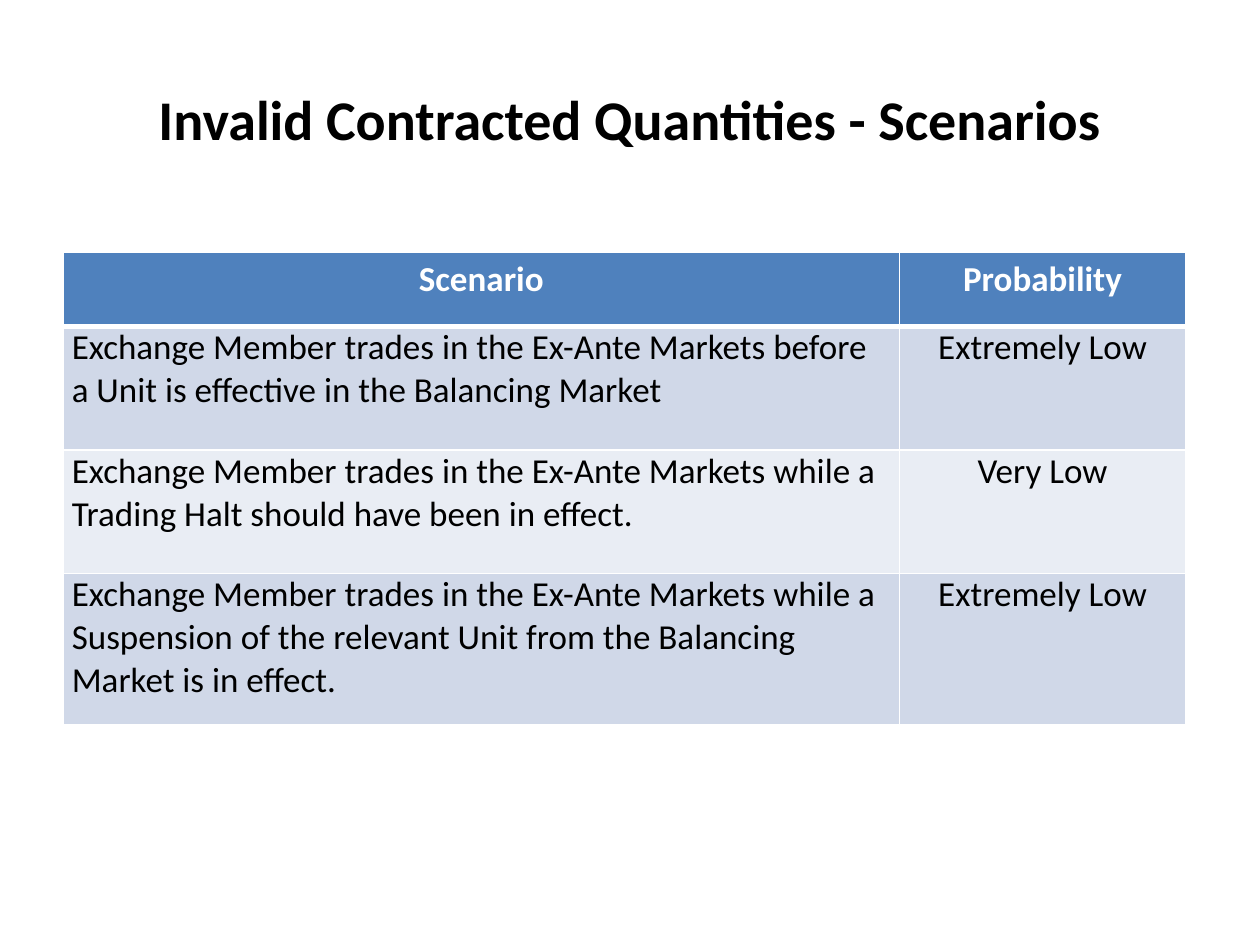
import pptx
import pptx.dml.color
import pptx.enum.text
import pptx.oxml
import pptx.oxml.ns
import pptx.util

Inches = pptx.util.Inches
Pt = pptx.util.Pt
RGBColor = pptx.dml.color.RGBColor
PP_ALIGN = pptx.enum.text.PP_ALIGN
MSO_ANCHOR = pptx.enum.text.MSO_ANCHOR

HEADING = "Invalid Contracted Quantities - Scenarios"
SCENARIOS = [
    ("Scenario", "Probability"),
    ("Exchange Member trades in the Ex-Ante Markets before a Unit is effective "
     "in the Balancing Market", "Extremely Low"),
    ("Exchange Member trades in the Ex-Ante Markets while a Trading Halt should "
     "have been in effect.", "Very Low"),
    ("Exchange Member trades in the Ex-Ante Markets while a Suspension of the "
     "relevant Unit from the Balancing Market is in effect.", "Extremely Low"),
]
COLUMN_WIDTHS = (6.64, 2.27)
ROW_HEIGHTS = (0.59, 0.98, 0.98, 1.2)

FONT = "Calibri"
BLACK = RGBColor(0x00, 0x00, 0x00)
WHITE = RGBColor(0xFF, 0xFF, 0xFF)
HEADER_BLUE = RGBColor(0x4F, 0x81, 0xBD)
BANDS = (RGBColor(0xE9, 0xED, 0xF4), RGBColor(0xD0, 0xD8, 0xE8))


def write(paragraph, text, size, color, bold, align):
    paragraph.alignment = align
    run = paragraph.add_run()
    run.text = text
    run.font.name = FONT
    run.font.size = Pt(size)
    run.font.color.rgb = color
    run.font.bold = bold


def set_borders(cell, bottom_width):
    properties = cell._tc.get_or_add_tcPr()
    widths = {"lnL": 1, "lnR": 1, "lnT": 1, "lnB": bottom_width}
    for position, (side, width) in enumerate(widths.items()):
        border = pptx.oxml.parse_xml(
            f'<a:{side} {pptx.oxml.ns.nsdecls("a")} w="{Pt(width)}">'
            f'<a:solidFill><a:srgbClr val="{WHITE}"/></a:solidFill></a:{side}>')
        properties.insert(position, border)


def fill_cell(cell, text, row, column):
    header = row == 0
    cell.margin_left = cell.margin_right = Inches(0.07)
    cell.margin_top = cell.margin_bottom = 0
    cell.fill.solid()
    cell.fill.fore_color.rgb = HEADER_BLUE if header else BANDS[row % 2]
    set_borders(cell, 3 if header or row == 0 else 1)
    paragraph = cell.text_frame.paragraphs[0]
    if header:
        paragraph.line_spacing = 1.15
        paragraph.space_after = Pt(10)
    centred = header or column == 1
    write(paragraph, text, 20, WHITE if header else BLACK, header,
          PP_ALIGN.CENTER if centred else PP_ALIGN.LEFT)
    if row == 1:
        top = cell._tc.tcPr.find(pptx.oxml.ns.qn("a:lnT"))
        top.set("w", str(Pt(3)))


def main():
    deck = pptx.Presentation()
    deck.slide_width, deck.slide_height = Inches(10), Inches(7.5)
    slide = deck.slides.add_slide(deck.slide_layouts[5])

    title = slide.shapes.title
    title.left, title.top = Inches(0.5), Inches(0.3)
    title.width, title.height = Inches(9), Inches(0.92)
    title_frame = title.text_frame
    title_frame.vertical_anchor = MSO_ANCHOR.TOP
    title_frame.margin_top, title_frame.margin_bottom = Inches(0.37), 0
    write(title_frame.paragraphs[0], HEADING, 32, BLACK, True, PP_ALIGN.CENTER)

    table = slide.shapes.add_table(
        len(ROW_HEIGHTS), len(COLUMN_WIDTHS), Inches(0.5), Inches(2),
        Inches(sum(COLUMN_WIDTHS)), Inches(sum(ROW_HEIGHTS))).table
    for column, width in zip(table.columns, COLUMN_WIDTHS):
        column.width = Inches(width)
    for row, height in zip(table.rows, ROW_HEIGHTS):
        row.height = Inches(height)
    for row, texts in enumerate(SCENARIOS):
        for column, text in enumerate(texts):
            fill_cell(table.cell(row, column), text, row, column)

    deck.save("out.pptx")


if __name__ == "__main__":
    main()
